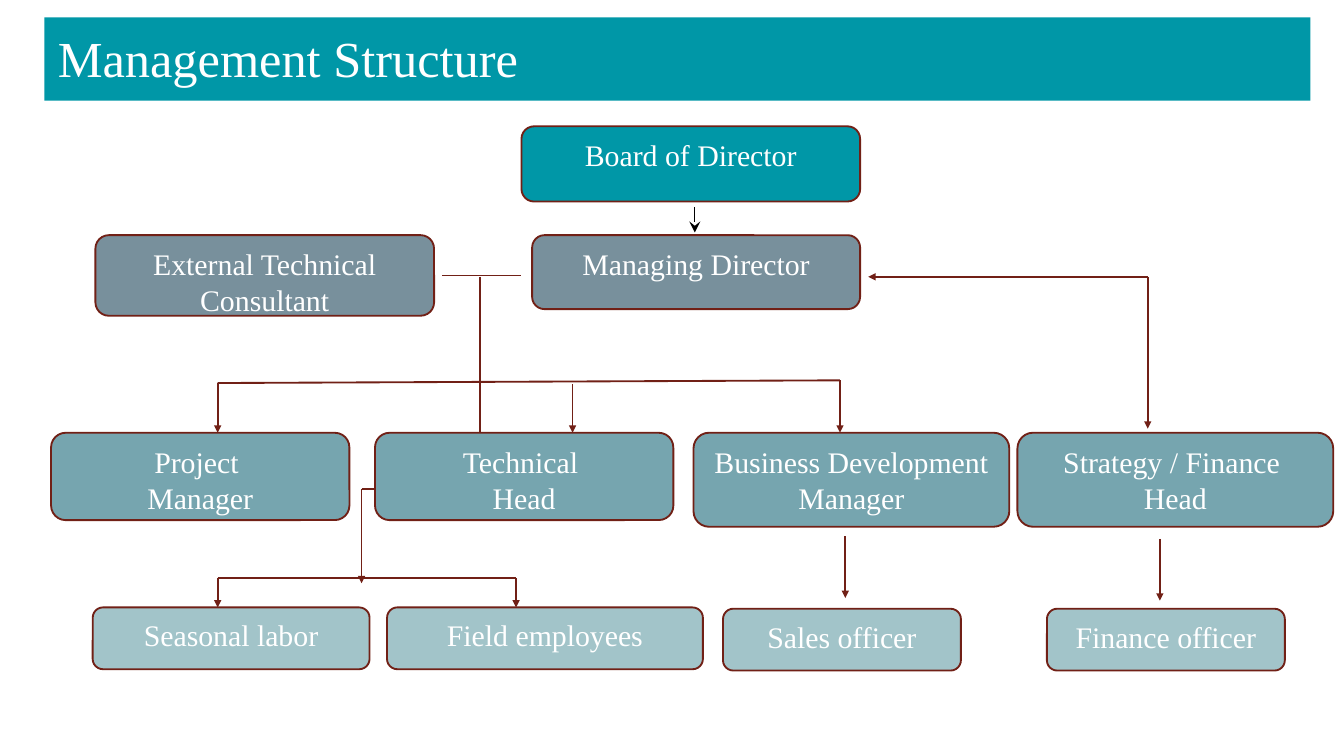
"""Build the management structure slide."""
from lxml import etree
from pptx import Presentation
from pptx.dml.color import RGBColor
from pptx.enum.shapes import MSO_CONNECTOR, MSO_SHAPE
from pptx.enum.text import MSO_ANCHOR, MSO_AUTO_SIZE, PP_ALIGN
from pptx.oxml.ns import qn
from pptx.util import Inches, Pt

ROUND, STRAIGHT = MSO_SHAPE.ROUNDED_RECTANGLE, MSO_CONNECTOR.STRAIGHT
LEFT, CENTER = PP_ALIGN.LEFT, PP_ALIGN.CENTER
TOP, BOTTOM = MSO_ANCHOR.TOP, MSO_ANCHOR.BOTTOM
NO_FIT = MSO_AUTO_SIZE.NONE
FONT = "Times New Roman"
WIDTH = 10
HEIGHT = WIDTH * 9 / 16
COLORS = {
    "teal": "0097A7", "slate": "78909C", "head": "76A5AF", "staff": "A2C4C9",
    "line": "712016", "black": "000000", "white": "FFFFFF",
}
ROWS = {"board": 0.94, "director": 1.75, "heads": 3.22, "staff": 4.52}
BUS, STAFF_BUS, DIRECTOR_MID = 2.85, 4.3, 2.06
PROJECT_X, TECH_X, BUSINESS_X, STRATEGY_X = 1.62, 4.26, 6.25, 8.54
FIELD_X, TRUNK_X, TECH_DROP_X = 3.84, 3.57, 2.69

BOXES = [
    ("Board of Director", 3.88, ROWS["board"], 2.52, 0.56, "teal"),
    ("External Technical Consultant", 0.71, ROWS["director"], 2.52, 0.6, "slate"),
    ("Managing Director", 3.96, ROWS["director"], 2.44, 0.55, "slate"),
    ("Project \nManager", 0.38, ROWS["heads"], 2.22, 0.65, "head"),
    ("Technical \nHead", 2.79, ROWS["heads"], 2.22, 0.65, "head"),
    ("Business Development Manager", 5.16, ROWS["heads"], 2.35, 0.7, "head"),
    ("Strategy / Finance \nHead", 7.57, ROWS["heads"], 2.35, 0.7, "head"),
    ("Seasonal labor", 0.69, ROWS["staff"], 2.06, 0.46, "staff"),
    ("Field employees", 2.88, ROWS["staff"], 2.35, 0.46, "staff"),
    ("Sales officer", 5.38, ROWS["staff"] + 0.01, 1.77, 0.46, "staff"),
    ("Finance officer", 7.79, ROWS["staff"] + 0.01, 1.77, 0.46, "staff"),
]
LINES = [
    (PROJECT_X, BUS, BUSINESS_X, BUS - 0.02),
    (3.29, 2.05, 3.88, 2.05),
    (TRUNK_X, DIRECTOR_MID, TRUNK_X, ROWS["heads"]),
    (PROJECT_X, STAFF_BUS, FIELD_X, STAFF_BUS),
    (TECH_DROP_X, 3.64, 2.79, 3.64),
]
ARROWS = [
    (PROJECT_X, BUS, PROJECT_X, ROWS["heads"]),
    (TECH_X, BUS + 0.01, TECH_X, ROWS["heads"]),
    (BUSINESS_X, BUS - 0.02, BUSINESS_X, ROWS["heads"]),
    (STRATEGY_X, DIRECTOR_MID, STRATEGY_X, 3.19),
    (STRATEGY_X, DIRECTOR_MID, 6.46, DIRECTOR_MID),
    (PROJECT_X, STAFF_BUS, PROJECT_X, ROWS["staff"]),
    (FIELD_X, STAFF_BUS, FIELD_X, ROWS["staff"]),
    (TECH_DROP_X, 3.64, TECH_DROP_X, 4.34),
    (6.29, 3.99, 6.29, 4.45),
    (8.63, 4.01, 8.63, 4.47),
]


def rgb(name):
    """Return the named colour."""
    return RGBColor.from_string(COLORS[name])


def fill(sp, color):
    """Give a shape a solid fill."""
    sp.fill.solid()
    sp.fill.fore_color.rgb = rgb(color)


def write(sp, text, size=16, color="white", align=CENTER, anchor=TOP, bottom=0.05):
    """Write formatted text into a shape, one paragraph per line."""
    tf = sp.text_frame
    tf.word_wrap, tf.auto_size, tf.vertical_anchor = True, NO_FIT, anchor
    tf.margin_left = tf.margin_right = Inches(0.1)
    tf.margin_top, tf.margin_bottom = Inches(0.05), Inches(bottom)
    tf.text = text
    for p in tf.paragraphs:
        p.alignment = align
        font = p.runs[0].font
        font.name, font.size = FONT, Pt(size)
        font.color.rgb = rgb(color)


def add_title(s, text):
    """Place the title placeholder as a filled band."""
    sp = s.shapes.title
    sp.left, sp.top, sp.width, sp.height = map(Inches, (0.33, 0.13, 9.42, 0.62))
    fill(sp, "teal")
    write(sp, text, size=27, align=LEFT, anchor=BOTTOM, bottom=0.1)


def add_box(s, text, x, y, w, h, color):
    """Add one rounded box of the chart."""
    sp = s.shapes.add_shape(ROUND, *map(Inches, (x, y, w, h)))
    sp.shadow.inherit = False
    fill(sp, color)
    sp.line.color.rgb = rgb("line")
    sp.line.width = Pt(1)
    write(sp, text)


def add_line(s, ends, color="line", width=1, tail=None, size="sm"):
    """Add a straight connector, with an arrowhead if one is named."""
    c = s.shapes.add_connector(STRAIGHT, *map(Inches, ends))
    c.line.color.rgb = rgb(color)
    c.line.width = Pt(width)
    sp_pr = c._element.spPr
    if tail:
        ln = sp_pr.find(qn("a:ln"))
        etree.SubElement(ln, qn("a:tailEnd"), type=tail, w=size, len=size)
    etree.SubElement(sp_pr, qn("a:effectLst"))


def main():
    """Build and save the slide."""
    prs = Presentation()
    prs.slide_width, prs.slide_height = Inches(WIDTH), Inches(HEIGHT)
    s = prs.slides.add_slide(prs.slide_layouts[5])
    add_title(s, "Management Structure")
    for box in BOXES:
        add_box(s, *box)
    for ends in LINES:
        add_line(s, ends)
    for ends in ARROWS:
        add_line(s, ends, tail="triangle")
    add_line(s, (5.17, 1.54, 5.17, 1.73), color="black", width=0.75,
             tail="stealth", size="med")
    prs.save("out.pptx")


if __name__ == "__main__":
    main()
